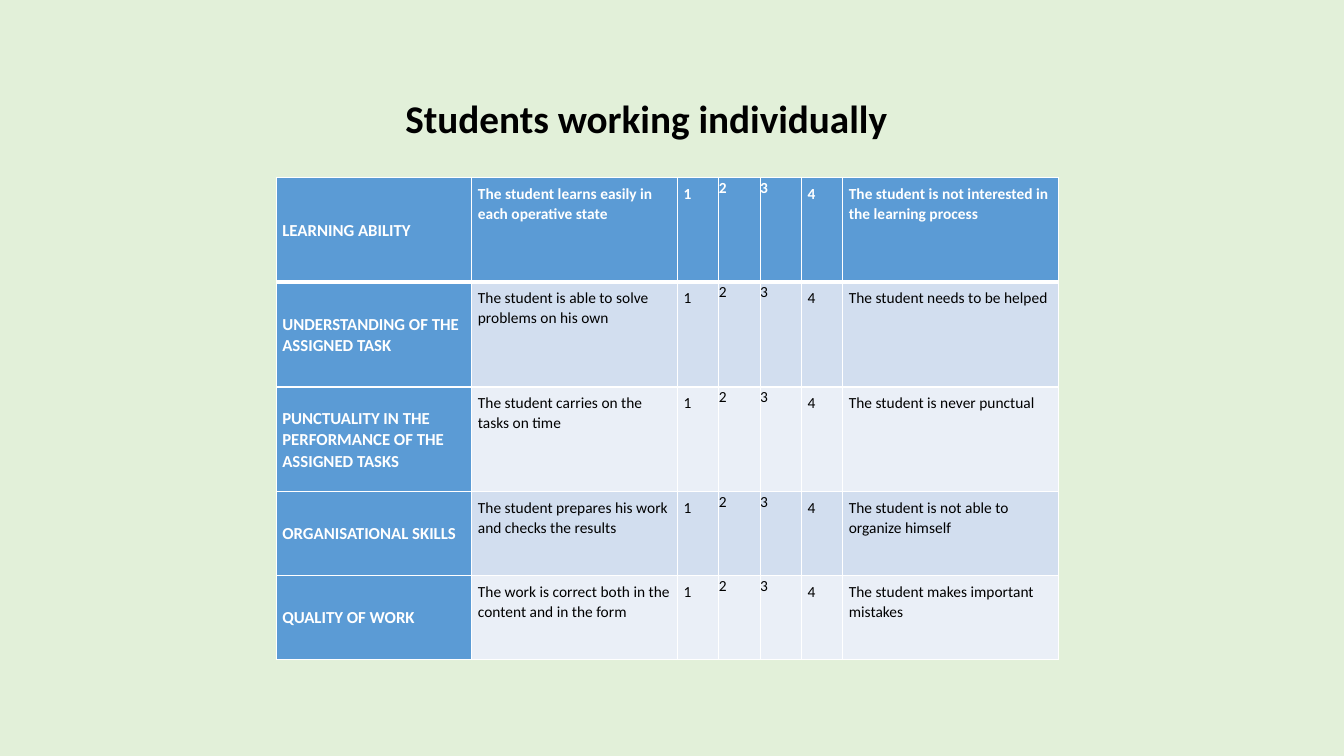
from lxml import etree
from pptx import Presentation
from pptx.dml.color import RGBColor
from pptx.enum import text
from pptx.oxml import ns
from pptx.util import Inches, Pt

TITLE = "Students working individually"
CRITERIA = [
    ("LEARNING ABILITY", "The student learns easily in each operative state",
     "The student is not interested in the learning process"),
    ("UNDERSTANDING OF THE ASSIGNED TASK", "The student is able to solve problems on his own",
     "The student needs to be helped"),
    ("PUNCTUALITY IN THE PERFORMANCE OF THE ASSIGNED TASKS",
     "The student carries on the tasks on time", "The student is never punctual"),
    ("ORGANISATIONAL SKILLS", "The student prepares his work and checks the results",
     "The student is not able to organize himself"),
    ("QUALITY OF WORK", "The work is correct both in the content and in the form",
     "The student makes important mistakes"),
]
SCORES = ["1", "2", "3", "4"]
COLUMN_WIDTHS = [1.94, 2.04] + [0.41] * len(SCORES) + [2.14]
ROW_HEIGHTS = [1.04, 1.04, 1.04, 0.83, 0.83]
COLORS = {"page": "E2F0D9", "header": "5B9BD5", "odd": "D2DEEF", "even": "EAEFF7",
          "white": "FFFFFF", "black": "000000"}
FONT = "Calibri"


def color(name):
    return RGBColor.from_string(COLORS[name])


def style_text(frame, size, color_name, bold, spacing):
    paragraph = frame.paragraphs[0]
    paragraph.line_spacing = spacing
    font = paragraph.runs[0].font
    font.name, font.size, font.bold = FONT, Pt(size), bold
    font.color.rgb = color(color_name)


def add_borders(cell, widths):
    properties = cell._tc.get_or_add_tcPr()
    for side, width in widths.items():
        line = etree.SubElement(properties, ns.qn(f"a:ln{side}"), w=str(Pt(width)))
        fill = etree.SubElement(line, ns.qn("a:solidFill"))
        etree.SubElement(fill, ns.qn("a:srgbClr"), val=COLORS["white"])


def add_title(page):
    box = page.shapes.add_textbox(Inches(0.92), Inches(0.4), Inches(11.5), Inches(1.45))
    frame = box.text_frame
    frame.word_wrap = True
    frame.vertical_anchor = text.MSO_ANCHOR.MIDDLE
    frame.margin_left, frame.margin_top = Inches(3.1), Inches(0.19)
    frame.text = TITLE
    style_text(frame, 28, "black", True, 0.9)


def fill_cell(cell, value, row, column):
    is_label = column == 0
    is_header = row == 0 or is_label
    margin = Inches(0 if value in SCORES[1:3] else 0.06)
    cell.margin_left = cell.margin_right = cell.margin_top = cell.margin_bottom = margin
    cell.vertical_anchor = text.MSO_ANCHOR.MIDDLE if is_label else text.MSO_ANCHOR.TOP
    cell.text = value
    style_text(cell.text_frame, 12 if is_label else 11,
               "white" if is_header else "black", is_header, 1.05)
    add_borders(cell, {"L": 1, "R": 1, "T": 3 if row == 1 else 1, "B": 3 if row == 0 else 1})
    cell.fill.solid()
    band = "odd" if row % 2 else "even"
    cell.fill.fore_color.rgb = color("header" if is_header else band)


def add_rubric(page):
    table = page.shapes.add_table(
        len(CRITERIA), len(COLUMN_WIDTHS), Inches(2.74), Inches(1.76),
        Inches(sum(COLUMN_WIDTHS)), Inches(sum(ROW_HEIGHTS))).table
    for column, width in zip(table.columns, COLUMN_WIDTHS):
        column.width = Inches(width)
    for row, height in zip(table.rows, ROW_HEIGHTS):
        row.height = Inches(height)
    for row, (label, best, worst) in enumerate(CRITERIA):
        for column, value in enumerate([label, best, *SCORES, worst]):
            fill_cell(table.cell(row, column), value, row, column)


def main():
    deck = Presentation()
    deck.slide_width, deck.slide_height = Inches(13.33), Inches(7.5)
    page = deck.slides.add_slide(deck.slide_layouts[6])
    page.background.fill.solid()
    page.background.fill.fore_color.rgb = color("page")
    add_title(page)
    add_rubric(page)
    deck.save("out.pptx")


if __name__ == "__main__":
    main()
